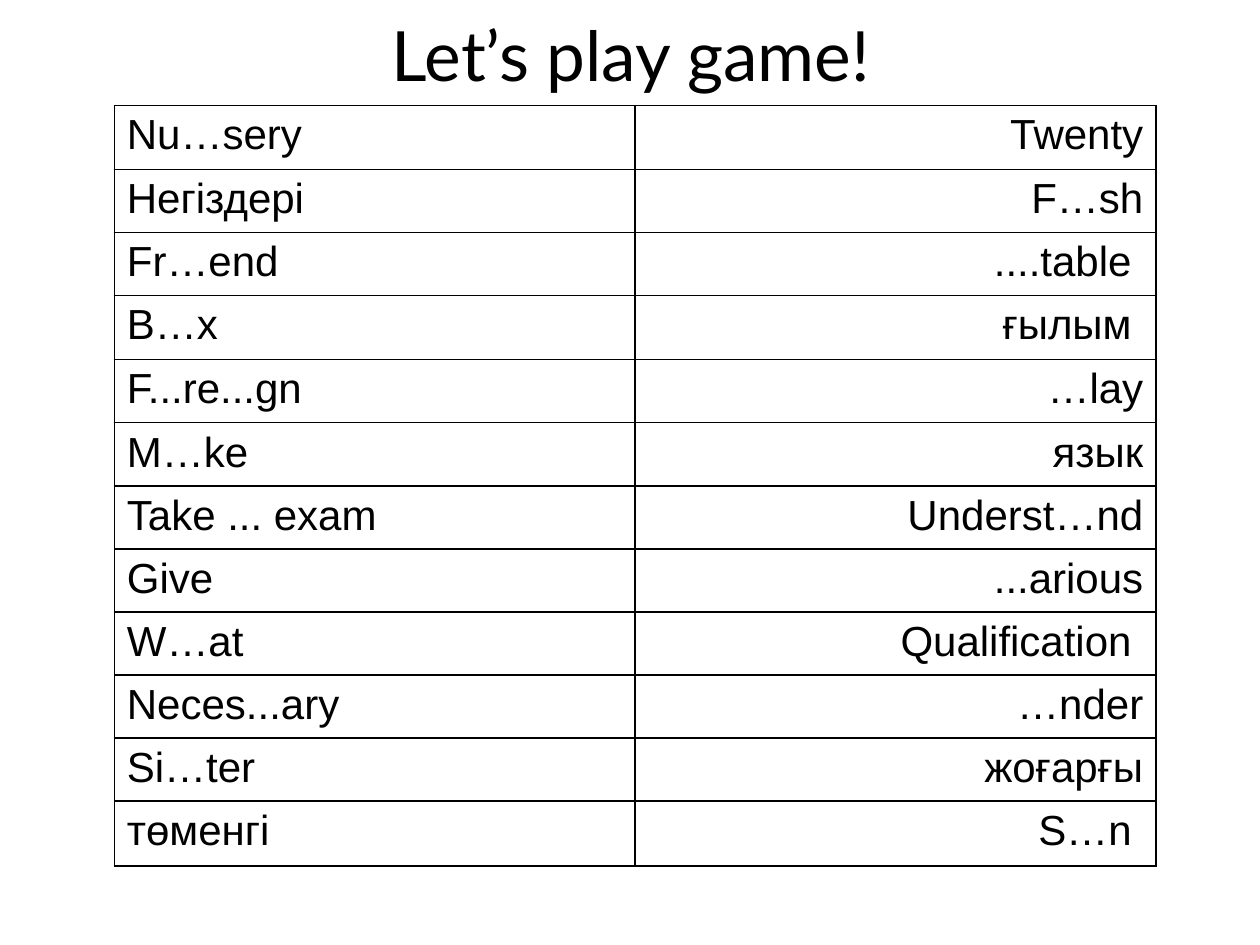
from dataclasses import dataclass

from lxml import etree
from pptx import Presentation
from pptx import util as u
from pptx.dml.color import RGBColor
from pptx.enum import text
from pptx.oxml import ns

COLORS = {"ink": "000000", "paper": "FFFFFF"}
ROW_H = 35.6
TALL_H = 36.6
LAST_H = 37.1
COL_W = 297.6


@dataclass
class WordRow:
    left: str
    right: str
    height: float = ROW_H


ROWS = [
    WordRow("Nu…sery", "Twenty", TALL_H),
    WordRow("Негіздері", "F…sh"),
    WordRow("Fr…end", "....table "),
    WordRow("B…x", "ғылым ", TALL_H),
    WordRow("F...re...gn", "…lay"),
    WordRow("M…ke", "язык"),
    WordRow("Take ... exam", "Underst…nd"),
    WordRow("Give", "...arious"),
    WordRow("W…at", "Qualification "),
    WordRow("Neces...ary", "…nder"),
    WordRow("Si…ter", "жоғарғы"),
    WordRow("төменгі", "S…n ", LAST_H),
]


def write(tf, words: str, font: str, size: float, align) -> None:
    p = tf.paragraphs[0]
    p.text = words
    p.alignment = align
    p.font.name = font
    p.font.size = u.Pt(size)
    p.font.color.rgb = RGBColor.from_string(COLORS["ink"])


def add_borders(cell) -> None:
    tc_pr = cell._tc.get_or_add_tcPr()
    for side in ("lnL", "lnR", "lnT", "lnB"):
        ln = etree.SubElement(tc_pr, ns.qn(f"a:{side}"), w=str(u.Pt(1)))
        fill = etree.SubElement(ln, ns.qn("a:solidFill"))
        etree.SubElement(fill, ns.qn("a:srgbClr"), val=COLORS["ink"])


def add_title(slide, words: str) -> None:
    sp = slide.shapes.add_textbox(u.Pt(36.5), u.Pt(0.7), u.Pt(648), u.Pt(60))
    tf = sp.text_frame
    tf.word_wrap = True
    tf.vertical_anchor = text.MSO_ANCHOR.MIDDLE
    write(tf, words, "Lato", 39.6, text.PP_ALIGN.CENTER)


def add_word_table(slide, rows: list[WordRow]) -> None:
    height = sum(row.height for row in rows)
    frame = slide.shapes.add_table(
        len(rows), 2, u.Pt(65.3), u.Pt(60.3), u.Pt(2 * COL_W), u.Pt(height))
    table = frame.table
    table.first_row = False
    table.horz_banding = False
    aligns = (text.PP_ALIGN.LEFT, text.PP_ALIGN.RIGHT)
    for i, row in enumerate(rows):
        table.rows[i].height = u.Pt(row.height)
        for j, (words, align) in enumerate(zip((row.left, row.right), aligns)):
            cell = table.cell(i, j)
            add_borders(cell)
            cell.fill.solid()
            cell.fill.fore_color.rgb = RGBColor.from_string(COLORS["paper"])
            write(cell.text_frame, words, "Arial", 24, align)


def main() -> None:
    """Build the word game slide."""
    prs = Presentation()
    prs.slide_width, prs.slide_height = u.Pt(720), u.Pt(540)
    slide = prs.slides.add_slide(prs.slide_layouts[6])
    add_title(slide, "Let’s play game!")
    add_word_table(slide, ROWS)
    prs.save("out.pptx")


if __name__ == "__main__":
    main()
